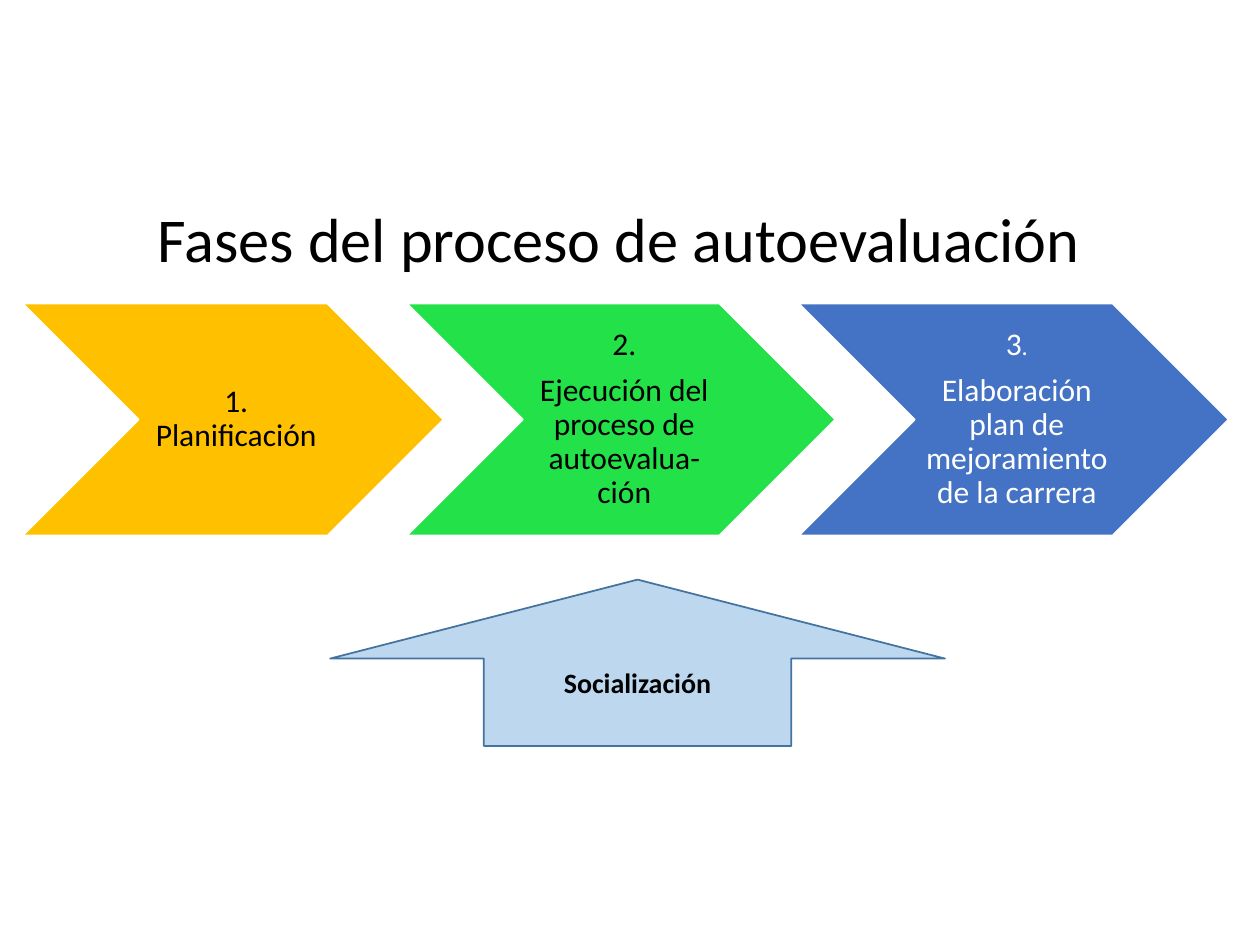
from dataclasses import dataclass

from pptx import Presentation
from pptx.dml.color import RGBColor
from pptx.enum.shapes import MSO_SHAPE
from pptx.enum.text import MSO_ANCHOR, MSO_AUTO_SIZE, PP_ALIGN
from pptx.util import Inches, Pt

CHEVRON, UP_ARROW = MSO_SHAPE.CHEVRON, MSO_SHAPE.UP_ARROW
MIDDLE, NO_FIT = MSO_ANCHOR.MIDDLE, MSO_AUTO_SIZE.NONE
LEFT, CENTER = PP_ALIGN.LEFT, PP_ALIGN.CENTER


@dataclass(frozen=True)
class Theme:
    """Font, colours and type sizes of the slide."""
    font: str = "Calibri"
    black: str = "000000"
    white: str = "FFFFFF"
    amber: str = "FFC000"
    green: str = "23E148"
    blue: str = "4472C4"
    pale_blue: str = "BDD7EE"
    steel: str = "43739E"
    title_size: float = 35.6
    phase_size: float = 18
    dot_size: float = 14
    support_size: float = 16


THEME = Theme()
PHASES = [
    (3.34, THEME.amber, THEME.black, ["1. Planificación"]),
    (3.4, THEME.green, THEME.black,
     ["2.", "Ejecución del proceso de autoevalua-ción"]),
    (3.41, THEME.blue, THEME.white,
     ["3", "Elaboración plan de mejoramiento de la carrera"]),
]
PHASE_LEFT, PHASE_TOP, PHASE_HEIGHT, PHASE_OVERLAP = 0.18, 2.41, 1.84, 0.29


def style_font(font, size, color, bold=False):
    """Apply the theme font with a size, colour and weight."""
    font.name = THEME.font
    font.size = Pt(size)
    font.bold = bold
    font.color.rgb = RGBColor.from_string(color)


def add_block(slide, preset, box, fill, outline):
    """Add a filled preset shape with a thin outline."""
    block = slide.shapes.add_shape(preset, *map(Inches, box))
    block.shadow.inherit = False
    block.fill.solid()
    block.fill.fore_color.rgb = RGBColor.from_string(fill)
    block.line.color.rgb = RGBColor.from_string(outline)
    block.line.width = Pt(1)
    block.text_frame.word_wrap = True
    block.text_frame.vertical_anchor = MIDDLE
    return block


def set_title(slide, text):
    """Place and format the title placeholder."""
    title = slide.shapes.title
    title.left, title.top = Inches(1.15), Inches(1.48)
    title.width, title.height = Inches(8.32), Inches(0.89)
    frame = title.text_frame
    frame.text = text
    frame.auto_size = NO_FIT
    frame.vertical_anchor = MIDDLE
    heading = frame.paragraphs[0]
    heading.alignment = LEFT
    heading.line_spacing = 0.9
    style_font(heading.runs[0].font, THEME.title_size, THEME.black)


def add_phase(slide, left, width, fill, color, lines):
    """Add one phase chevron with its number and name."""
    phase = add_block(slide, CHEVRON, (left, PHASE_TOP, width, PHASE_HEIGHT),
                      fill, THEME.white)
    frame = phase.text_frame
    frame.margin_left = Inches(0.08)
    frame.margin_right = frame.margin_top = frame.margin_bottom = Inches(0.03)
    frame.text = "\n".join(lines)
    for paragraph in frame.paragraphs:
        paragraph.alignment = CENTER
        paragraph.line_spacing = 0.9
        paragraph.space_after = Pt(7)
        style_font(paragraph.runs[0].font, THEME.phase_size, color)
    return phase


def add_small_dot(phase, color):
    """End the phase number with a smaller dot."""
    dot = phase.text_frame.paragraphs[0].add_run()
    dot.text = "."
    style_font(dot.font, THEME.dot_size, color)


def add_support_arrow(slide, text):
    """Add the arrow that supports the phases from below."""
    arrow = add_block(slide, UP_ARROW, (2.62, 4.6, 4.88, 1.32),
                      THEME.pale_blue, THEME.steel)
    arrow.adjustments[0] = 0.5
    arrow.adjustments[1] = 0.475
    arrow.text_frame.text = text
    label = arrow.text_frame.paragraphs[0]
    label.alignment = CENTER
    style_font(label.runs[0].font, THEME.support_size, THEME.black, bold=True)


def main():
    """Build the slide and save it."""
    deck = Presentation()
    deck.slide_width, deck.slide_height = Inches(10), Inches(7.5)
    slide = deck.slides.add_slide(deck.slide_layouts[5])
    set_title(slide, "Fases del proceso de autoevaluación")
    left = PHASE_LEFT
    for width, fill, color, lines in PHASES:
        phase = add_phase(slide, left, width, fill, color, lines)
        left += width - PHASE_OVERLAP
    add_small_dot(phase, THEME.white)
    add_support_arrow(slide, "Socialización")
    deck.save("out.pptx")


if __name__ == "__main__":
    main()
